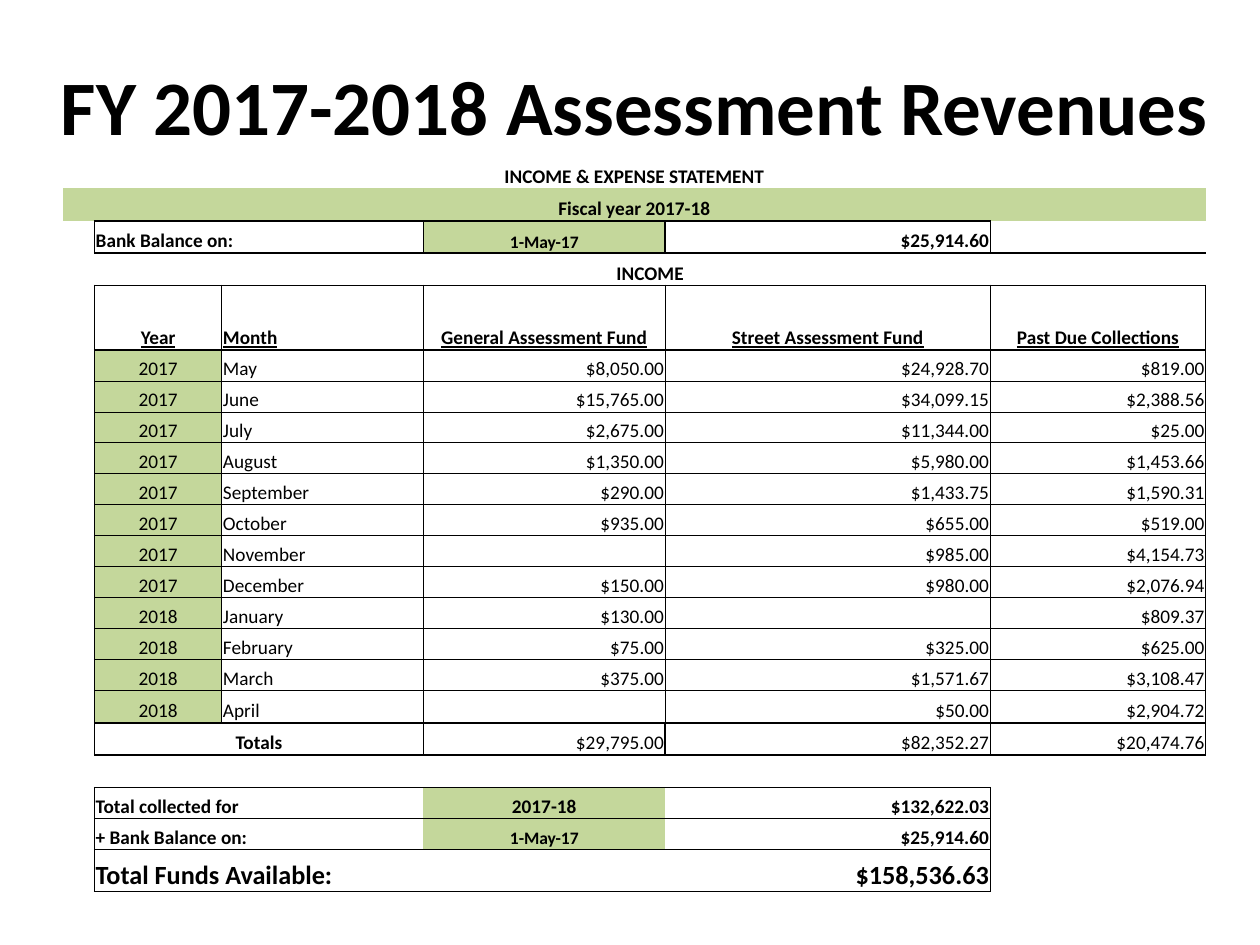
from lxml.etree import SubElement
from pptx import Presentation
from pptx.dml.color import RGBColor
from pptx.enum.text import MSO_ANCHOR, PP_ALIGN
from pptx.oxml.ns import qn
from pptx.util import Inches, Pt

COLORS = {"ink": "000000", "paper": "FFFFFF", "green": "C4D79B"}
FONT = "Calibri"
TITLE = "FY 2017-2018 Assessment Revenues"
HEADINGS = ["Year", "Month", "General Assessment Fund", "Street Assessment Fund",
            "Past Due Collections"]
MONTHS = [
    ("2017", "May", "$8,050.00", "$24,928.70", "$819.00"),
    ("2017", "June", "$15,765.00", "$34,099.15", "$2,388.56"),
    ("2017", "July", "$2,675.00", "$11,344.00", "$25.00"),
    ("2017", "August", "$1,350.00", "$5,980.00", "$1,453.66"),
    ("2017", "September", "$290.00", "$1,433.75", "$1,590.31"),
    ("2017", "October", "$935.00", "$655.00", "$519.00"),
    ("2017", "November", "", "$985.00", "$4,154.73"),
    ("2017", "December", "$150.00", "$980.00", "$2,076.94"),
    ("2018", "January", "$130.00", "", "$809.37"),
    ("2018", "February", "$75.00", "$325.00", "$625.00"),
    ("2018", "March", "$375.00", "$1,571.67", "$3,108.47"),
    ("2018", "April", "", "$50.00", "$2,904.72"),
]

# Style: alignment, fill, size, bold, underline
LEFT, CENTER, RIGHT = PP_ALIGN.LEFT, PP_ALIGN.CENTER, PP_ALIGN.RIGHT
STYLES = {
    "plain": (LEFT, "paper", 11, False, False),
    "amount": (RIGHT, "paper", 11, False, False),
    "year": (CENTER, "green", 11, False, False),
    "label": (LEFT, "paper", 11, True, False),
    "banner": (CENTER, "paper", 11, True, False),
    "period": (CENTER, "green", 11, True, False),
    "date": (CENTER, "green", 10, True, False),
    "sum": (RIGHT, "paper", 11, True, False),
    "heading": (CENTER, "paper", 11, True, True),
    "month heading": (LEFT, "paper", 11, True, True),
    "grand label": (LEFT, "paper", 15, True, False),
    "grand sum": (RIGHT, "paper", 15, True, False),
}
HEADING_STYLES = ["heading", "month heading"] + ["heading"] * 3
MONTH_STYLES = ["year", "plain"] + ["amount"] * 3


def single_cells(texts, styles):
    return [(column, 1, text, style)
            for column, (text, style) in enumerate(zip(texts, styles), 1)]


# Row: height in points, cells of (column, columns spanned, text, style)
SHORT, TALL = 17.7, 18.5
ROWS = [
    (SHORT, [(0, 6, "INCOME & EXPENSE STATEMENT", "banner")]),
    (TALL, [(0, 6, "Fiscal year 2017-18", "period")]),
    (TALL, [(1, 2, "Bank Balance on:", "label"), (3, 1, "1-May-17", "date"),
            (4, 1, "$25,914.60", "sum")]),
    (TALL, [(1, 5, "INCOME", "banner")]),
    (36.9, single_cells(HEADINGS, HEADING_STYLES)),
    *[(SHORT, single_cells(month, MONTH_STYLES)) for month in MONTHS[:-1]],
    (TALL, single_cells(MONTHS[-1], MONTH_STYLES)),
    (TALL, [(1, 2, "Totals", "banner"), (3, 1, "$29,795.00", "amount"),
            (4, 1, "$82,352.27", "amount"), (5, 1, "$20,474.76", "amount")]),
    (TALL, []),
    (SHORT, [(1, 2, "Total collected for", "label"), (3, 1, "2017-18", "period"),
             (4, 1, "$132,622.03", "sum")]),
    (SHORT, [(1, 2, "+ Bank Balance on:", "label"), (3, 1, "1-May-17", "date"),
             (4, 1, "$25,914.60", "sum")]),
    (24.1, [(1, 3, "Total Funds Available:", "grand label"),
            (4, 1, "$158,536.63", "grand sum")]),
]
COLUMN_WIDTHS = [0.25, 1.01, 1.6, 1.92, 2.58, 1.71]

# Ruled block: first row, last row, last column, inner line width (0 for none)
BLOCKS = [(2, 2, 4, 1), (4, 4, 5, 0.5), (5, 16, 5, 0.5), (17, 17, 5, 1),
          (19, 19, 4, 0), (20, 20, 4, 0), (21, 21, 4, 0)]


def ruled_lines():
    """Widths of the lines above ("h") and left of ("v") each grid position."""
    lines = {("h", 3, column): 1 for column in range(1, 6)}
    for first, last, right, inner in BLOCKS:
        for row in range(first, last + 2):
            for column in range(1, right + 1):
                lines["h", row, column] = 1 if row in (first, last + 1) else inner
        for row in range(first, last + 1):
            for column in range(1, right + 2):
                lines["v", row, column] = 1 if column in (1, right + 1) else inner
    for row, (_, cells) in enumerate(ROWS):
        for column, span, *_ in cells:
            for covered in range(column + 1, column + span):
                lines["v", row, covered] = 0
    return lines


def set_font(font, size, bold, underline=False):
    font.name, font.size, font.bold, font.underline = FONT, Pt(size), bold, underline
    font.color.rgb = RGBColor.from_string(COLORS["ink"])


def set_border(cell, side, width):
    line = SubElement(cell._tc.get_or_add_tcPr(), qn(f"a:ln{side}"), w=str(Pt(width)))
    if width:
        fill = SubElement(line, qn("a:solidFill"))
        SubElement(fill, qn("a:srgbClr"), val=COLORS["ink"])
    else:
        SubElement(line, qn("a:noFill"))


def fill_cell(cell, text, style):
    align, fill, size, bold, underline = STYLES[style]
    cell.fill.solid()
    cell.fill.fore_color.rgb = RGBColor.from_string(COLORS[fill])
    cell.margin_left = cell.margin_right = cell.margin_top = Inches(0.01)
    cell.margin_bottom = 0
    cell.vertical_anchor = MSO_ANCHOR.BOTTOM
    para = cell.text_frame.paragraphs[0]
    para.alignment = align
    if text:
        para.text = text
        set_font(para.font, size, bold, underline)
    else:
        SubElement(para._p, qn("a:endParaRPr"), sz=str(size * 100))


def add_title(page):
    box = page.shapes.add_textbox(Inches(0.33), Inches(0.17), Inches(9.42), Inches(1.33))
    box.text_frame.word_wrap = True
    box.text_frame.vertical_anchor = MSO_ANCHOR.MIDDLE
    para = box.text_frame.paragraphs[0]
    para.text = TITLE
    para.alignment = CENTER
    set_font(para.font, 44, True)


def add_statement(page):
    height = sum(points for points, _ in ROWS) / 72
    table = page.shapes.add_table(len(ROWS), len(COLUMN_WIDTHS), Inches(0.5), Inches(1.25),
                                  Inches(sum(COLUMN_WIDTHS)), Inches(height)).table
    table.first_row = table.horz_banding = False
    for column, width in zip(table.columns, COLUMN_WIDTHS):
        column.width = Inches(width)

    lines = ruled_lines()
    for row, (points, cells) in enumerate(ROWS):
        table.rows[row].height = Inches(points / 72)
        contents = {column: (span, text, style) for column, span, text, style in cells}
        for column in range(len(COLUMN_WIDTHS)):
            span, text, style = contents.get(column, (1, "", "plain"))
            cell = table.cell(row, column)
            for side, key in (("L", ("v", row, column)), ("R", ("v", row, column + span)),
                              ("T", ("h", row, column)), ("B", ("h", row + 1, column))):
                set_border(cell, side, lines.get(key, 0))
            fill_cell(cell, text, style)
            if span > 1:
                cell.merge(table.cell(row, column + span - 1))


def main():
    deck = Presentation()
    deck.slide_width, deck.slide_height = Inches(10), Inches(7.5)
    page = deck.slides.add_slide(deck.slide_layouts[6])
    add_title(page)
    add_statement(page)
    deck.save("out.pptx")


if __name__ == "__main__":
    main()
